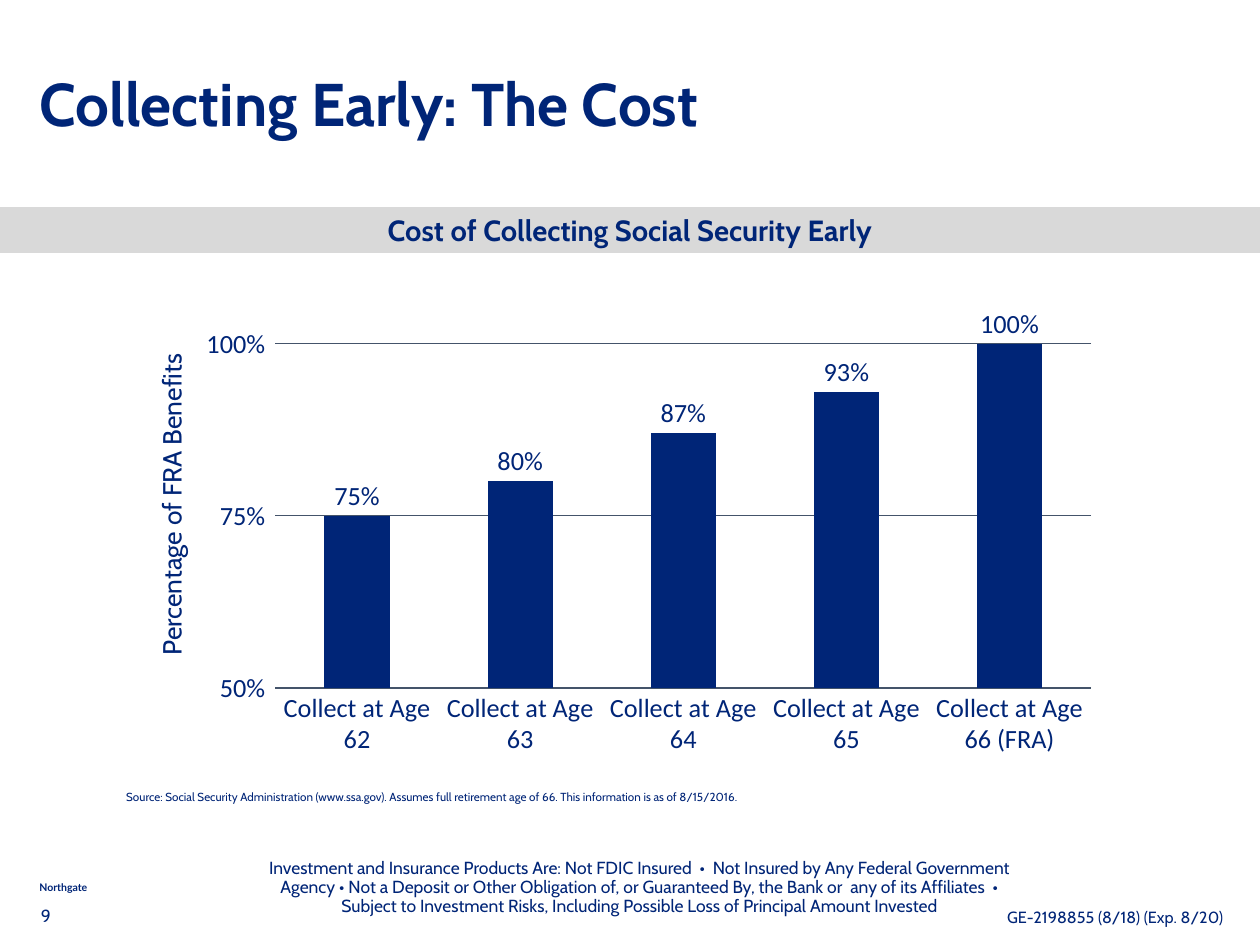
from lxml import etree
from pptx import Presentation
from pptx.chart import data as chart_data
from pptx.dml import color
from pptx.enum import chart as chart_enum, shapes, text
from pptx.util import Pt

NAVY, SLATE, GREY = "002577", "44546A", "D9D9D9"
HEAD_FONT, CHART_FONT = "Cabin", "Calibri"
LEFT, CENTER = text.PP_ALIGN.LEFT, text.PP_ALIGN.CENTER
TOP, MIDDLE, BOTTOM = text.MSO_ANCHOR.TOP, text.MSO_ANCHOR.MIDDLE, text.MSO_ANCHOR.BOTTOM


def rgb(value):
    """Turn a hex string into a colour."""
    return color.RGBColor.from_string(value)


def style(font, size, name=HEAD_FONT, bold=False):
    """Set size, typeface, weight and the navy colour of a font."""
    font.size, font.name, font.bold = Pt(size), name, bold
    font.color.rgb = rgb(NAVY)


def write(shape, lines, size, name=HEAD_FONT, bold=False, align=LEFT,
          anchor=TOP, spacing=1.0, insets=(7.2, 3.6)):
    """Fill a shape with one formatted paragraph per line."""
    frame = shape.text_frame
    frame.word_wrap = True
    frame.auto_size = text.MSO_AUTO_SIZE.NONE
    frame.vertical_anchor = anchor
    frame.margin_left = frame.margin_right = Pt(insets[0])
    frame.margin_top = frame.margin_bottom = Pt(insets[1])
    for index, line in enumerate(lines):
        paragraph = frame.add_paragraph() if index else frame.paragraphs[0]
        paragraph.alignment, paragraph.line_spacing = align, spacing
        paragraph.space_before = Pt(0)
        run = paragraph.add_run()
        run.text = line
        style(run.font, size, name, bold)


def add_text(slide, box, lines, size, **options):
    """Add a text box to the slide and return it."""
    shape = slide.shapes.add_textbox(*map(Pt, box))
    write(shape, lines, size, **options)
    return shape


def add_heading(slide, left, top, width, height):
    """Place the title placeholder."""
    title = slide.shapes.title
    title.left, title.top, title.width, title.height = map(Pt, (left, top, width, height))
    write(title, ["Collecting Early: The Cost"], 41.3, bold=True, anchor=MIDDLE, spacing=0.9)


def add_band(slide, left, top, width, height):
    """Draw the grey subtitle band."""
    band = slide.shapes.add_shape(
        shapes.MSO_SHAPE.RECTANGLE, *map(Pt, (left, top, width, height)))
    band.shadow.inherit = False
    band.fill.solid()
    band.fill.fore_color.rgb = rgb(GREY)
    band.line.fill.background()
    write(band, ["Cost of Collecting Social Security Early"], 20,
          bold=True, align=CENTER, anchor=MIDDLE)


def set_plot_area(chart, **fractions):
    """Fix the inner plot area as fractions of the chart."""
    plot_area = chart.plots[0]._element.getparent()
    namespace = etree.QName(plot_area).namespace
    for old in plot_area.findall(f"{{{namespace}}}layout"):
        plot_area.remove(old)
    layout = plot_area.makeelement(f"{{{namespace}}}layout")
    plot_area.insert(0, layout)
    manual = etree.SubElement(layout, f"{{{namespace}}}manualLayout")
    settings = {"layoutTarget": "inner", "xMode": "edge", "yMode": "edge", **fractions}
    for tag, value in settings.items():
        etree.SubElement(manual, f"{{{namespace}}}{tag}").set("val", str(value))


def add_benefit_chart(slide, left, top, width, height):
    """Add the benefit columns and their vertical axis caption."""
    data = chart_data.CategoryChartData(number_format="0%")
    ages = ["62", "63", "64", "65", "66 (FRA)"]
    data.categories = [f"Collect at Age {age}" for age in ages]
    data.add_series("Series 1", [0.75, 0.8, 0.87, 0.93, 1])
    chart = slide.shapes.add_chart(
        chart_enum.XL_CHART_TYPE.COLUMN_CLUSTERED,
        *map(Pt, (left, top, width, height)), data).chart
    chart.has_title = chart.has_legend = False
    style(chart.font, 18, CHART_FONT)

    plot = chart.plots[0]
    plot.gap_width, plot.vary_by_categories = 150, False
    plot.has_data_labels = True
    labels = plot.data_labels
    labels.show_value = True
    labels.number_format, labels.number_format_is_linked = "0%", False
    labels.position = chart_enum.XL_LABEL_POSITION.OUTSIDE_END
    style(labels.font, 18, CHART_FONT)
    fill = plot.series[0].format.fill
    fill.solid()
    fill.fore_color.rgb = rgb(NAVY)

    ages_axis, share_axis = chart.category_axis, chart.value_axis
    ages_axis.major_tick_mark = chart_enum.XL_TICK_MARK.NONE
    share_axis.minimum_scale, share_axis.maximum_scale = 0.5, 1
    share_axis.major_unit = 0.25
    share_axis.has_major_gridlines = True
    share_axis.tick_labels.number_format = "0%"
    share_axis.tick_labels.number_format_is_linked = False
    share_axis.format.line.fill.background()
    for line, weight in ((ages_axis.format.line, 1.5),
                         (share_axis.major_gridlines.format.line, 0.75)):
        line.color.rgb, line.width = rgb(SLATE), Pt(weight)
    for axis in (ages_axis, share_axis):
        style(axis.tick_labels.font, 18, CHART_FONT)
    set_plot_area(chart, x=0.094, y=0.192, w=0.885, h=0.658)

    caption = add_text(slide, (left - 126.5, top + 160.5, 229, 29),
                       ["Percentage of FRA Benefits"], 18)
    caption.rotation = 270


def add_footer(slide, left, top, width, height):
    """Place the source note, disclosure, brand, page number and form code."""
    add_text(slide, (left + 66, top, 649, 9.5),
             ["Source: Social Security Administration (www.ssa.gov). Assumes full "
              "retirement age of 66. This information is as of 8/15/2016."],
             8, anchor=BOTTOM, insets=(0, 0))
    add_text(slide, (left + 152.5, top + 44, 531.5, 57),
             ["Investment and Insurance Products Are: Not FDIC Insured  •  Not Insured by "
              "Any Federal Government Agency • Not a Deposit or Other Obligation of, or "
              "Guaranteed By, the Bank or  any of its Affiliates  •",
              "Subject to Investment Risks, Including Possible Loss of Principal "
              "Amount Invested"],
             12, align=CENTER, spacing=0.9)
    add_text(slide, (left + 1.5, top + 57.8, 134, 17), ["Northgate"], 7.2,
             name="Lato", bold=True, anchor=MIDDLE, insets=(5, 3))
    add_text(slide, (left + 0.5, top + height - 21.5, 171, 21.5), ["9"], 12, spacing=0.9)
    add_text(slide, (left + width - 171, top + height - 20, 171, 21.5),
             ["GE-2198855 (8/18) (Exp. 8/20)"], 11.1, spacing=0.9)


def main():
    """Build and save the presentation."""
    presentation = Presentation()
    presentation.slide_width, presentation.slide_height = Pt(864), Pt(648)
    slide = presentation.slides.add_slide(presentation.slide_layouts[5])
    add_heading(slide, 20, 45.5, 817, 55.5)
    add_benefit_chart(slide, 129.5, 167, 632, 358.5)
    add_band(slide, 0, 142, 864, 31.5)
    add_footer(slide, 20.5, 542, 834, 98)
    presentation.save("out.pptx")


if __name__ == "__main__":
    main()
